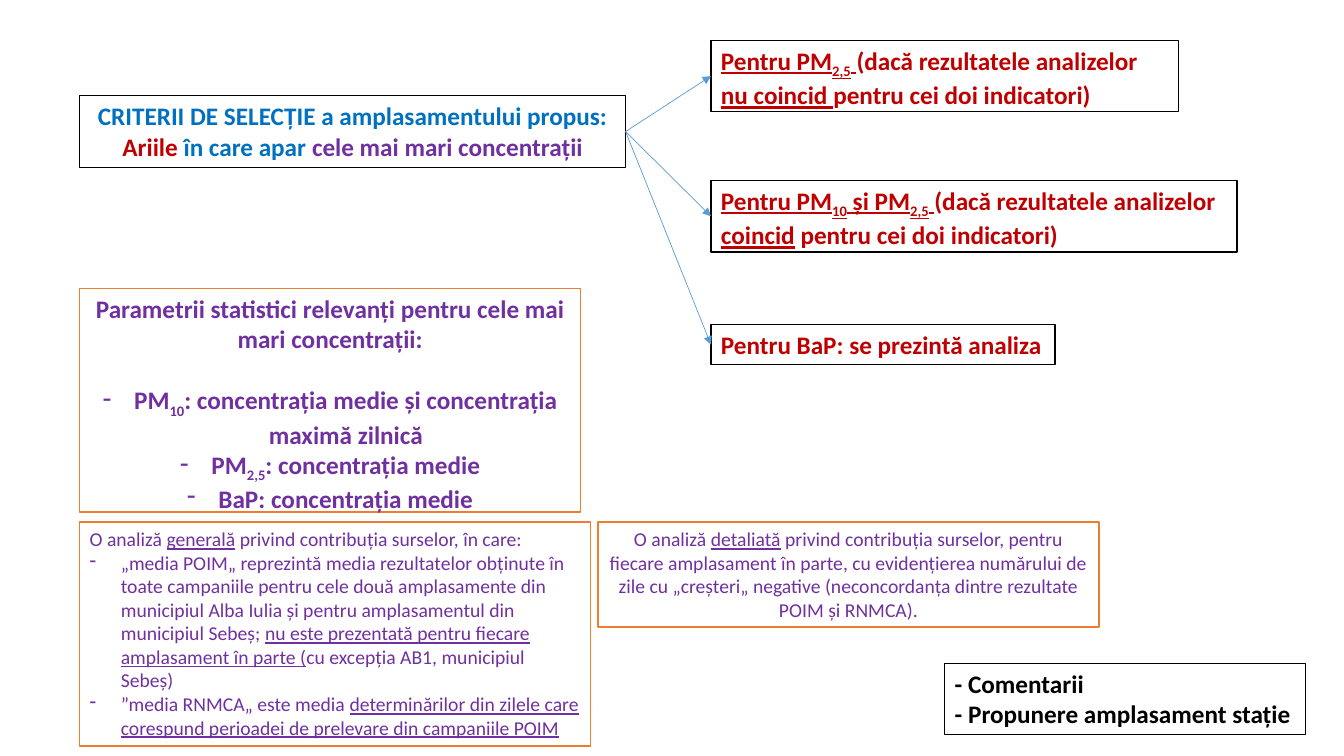
from lxml.etree import SubElement
from pptx import Presentation
from pptx.dml.color import RGBColor
from pptx.enum.shapes import MSO_CONNECTOR
from pptx.enum.text import MSO_ANCHOR, MSO_AUTO_SIZE, PP_ALIGN
from pptx.oxml.ns import qn
from pptx.util import Inches, Pt

HUES = {
    "white": "FFFFFF",
    "black": "000000",
    "blue": "0070C0",
    "red": "C00000",
    "plum": "7030A0",
    "rust": "ED7D31",
    "sky": "5B9BD5",
}


class Board:
    """Draws styled boxes and arrows on one slide, with lengths in percent of its size."""

    face = "Calibri"
    hang = Inches(0.31)

    def __init__(self, deck):
        self.wide, self.high = deck.slide_width, deck.slide_height
        self.slide = deck.slides.add_slide(deck.slide_layouts[6])

    def hue(self, name):
        return RGBColor.from_string(HUES[name])

    def box(self, x, y, w, h, paras, ink, edge="black", size=18, bold=True, mid=False):
        shape = self.slide.shapes.add_textbox(
            int(x * self.wide / 100), int(y * self.high / 100),
            int(w * self.wide / 100), int(h * self.high / 100))
        shape.fill.solid()
        shape.fill.fore_color.rgb = self.hue("white")
        shape.line.color.rgb = self.hue(edge)
        shape.line.width = Pt(1)
        frame = shape.text_frame
        frame.word_wrap = True
        frame.auto_size = MSO_AUTO_SIZE.SHAPE_TO_FIT_TEXT
        frame.vertical_anchor = MSO_ANCHOR.TOP
        for i, (kind, *runs) in enumerate(paras):
            para = frame.add_paragraph() if i else frame.paragraphs[0]
            self.para(para, kind, runs, ink, size, bold, mid)
        return shape

    def para(self, para, kind, runs, ink, size, bold, mid):
        para.alignment = PP_ALIGN.CENTER if mid else PP_ALIGN.LEFT
        if kind != "text":
            props = para._p.get_or_add_pPr()
            props.set("marL", str(self.hang))
            props.set("indent", str(-self.hang))
            SubElement(props, qn("a:buChar")).set("char", "-")
        if kind == "first":
            para.space_before = Pt(22)
        font = para.font
        font.name, font.size, font.bold = self.face, Pt(size), bold
        if all(self.tint(run) is None for run in runs):
            font.color.rgb = self.hue(ink)
        for run in runs:
            self.run(para, run, ink)

    def tint(self, run):
        return run[1] if isinstance(run, tuple) and run[1] in HUES else None

    def run(self, para, run, ink):
        text, mark = run if isinstance(run, tuple) else (run, "")
        part = para.add_run()
        part.text = text
        if mark in HUES:
            part.font.color.rgb = self.hue(mark)
        if mark in ("under", "both"):
            part.font.underline = True
        if mark in ("sub", "both"):
            part._r.get_or_add_rPr().set("baseline", "-25000")

    def arrow(self, start, end):
        link = self.slide.shapes.add_connector(MSO_CONNECTOR.STRAIGHT, 0, 0, 0, 0)
        link.begin_connect(start, 3)
        link.end_connect(end, 1)
        link.line.color.rgb = self.hue("sky")
        link.line.width = Pt(0.5)
        SubElement(link.line._get_or_add_ln(), qn("a:tailEnd")).set("type", "triangle")
        SubElement(link._element.spPr, qn("a:effectLst"))


def main():
    deck = Presentation()
    deck.slide_width, deck.slide_height = Inches(13.33), Inches(7.5)
    board = Board(deck)
    left, right, low = 5.93, 52.9, 69.07

    root = board.box(left, 12.67, 40.62, 9.47, [
        ("text", ("CRITERII DE SELECȚIE a amplasamentului propus:", "blue")),
        ("text", ("Ariile", "red"), (" în care apar ", "blue"),
         ("cele mai mari concentrații", "plum")),
    ], "blue", mid=True)

    board.box(left, 38.13, 37.28, 29.6, [
        ("text", "Parametrii statistici relevanți pentru cele mai mari concentrații:"),
        ("first", "PM", ("10", "sub"), ": concentrația medie și concentrația maximă zilnică"),
        ("item", "PM", ("2,5", "sub"), ": concentrația medie"),
        ("item", "BaP: concentrația medie"),
    ], "plum", "rust", mid=True)

    cases = [
        (5.33, 34.8, 9.47, [
            ("Pentru PM", "under"), ("2,5", "both"), (" ", "under"),
            "(dacă rezultatele analizelor ", ("nu coincid ", "under"),
            "pentru cei doi indicatori)"]),
        (23.87, 39.15, 9.47, [
            ("Pentru PM", "under"), ("10", "both"), (" și PM", "under"),
            ("2,5", "both"), (" ", "under"), "(dacă rezultatele analizelor ",
            ("coincid", "under"), " pentru cei doi indicatori)"]),
        (42.93, 25.6, 5.33, ["Pentru BaP: se prezintă analiza"]),
    ]
    for y, w, h, runs in cases:
        board.arrow(root, board.box(right, y, w, h, [("text", *runs)], "red"))

    board.box(left, low, 38.03, 29.6, [
        ("text", "O analiză ", ("generală", "under"),
         " privind contribuția surselor, în care:"),
        ("item", "„media POIM„ reprezintă media rezultatelor obținute în toate "
         "campaniile pentru cele două amplasamente din municipiul Alba Iulia și "
         "pentru amplasamentul din municipiul Sebeș; ",
         ("nu este prezentată pentru fiecare amplasament în parte (", "under"),
         "cu excepția AB1, municipiul Sebeș)"),
        ("item", "”media RNMCA„ este media ",
         ("determinărilor din zilele care corespund perioadei de prelevare din "
          "campaniile POIM", "under")),
    ], "plum", "rust", 14, False)

    board.box(70.3, 87.73, 26.86, 9.47, [
        ("text", "- Comentarii"),
        ("text", "- Propunere amplasament stație"),
    ], "black")

    board.box(44.49, low, 37.28, 13.87, [
        ("text", "O analiză ", ("detaliată", "under"),
         " privind contribuția surselor, pentru fiecare amplasament în parte, cu "
         "evidențierea numărului de zile cu „creșteri„ negative (neconcordanța "
         "dintre rezultate POIM și RNMCA)."),
    ], "plum", "rust", 14, False, True)

    deck.save("out.pptx")


if __name__ == "__main__":
    main()
